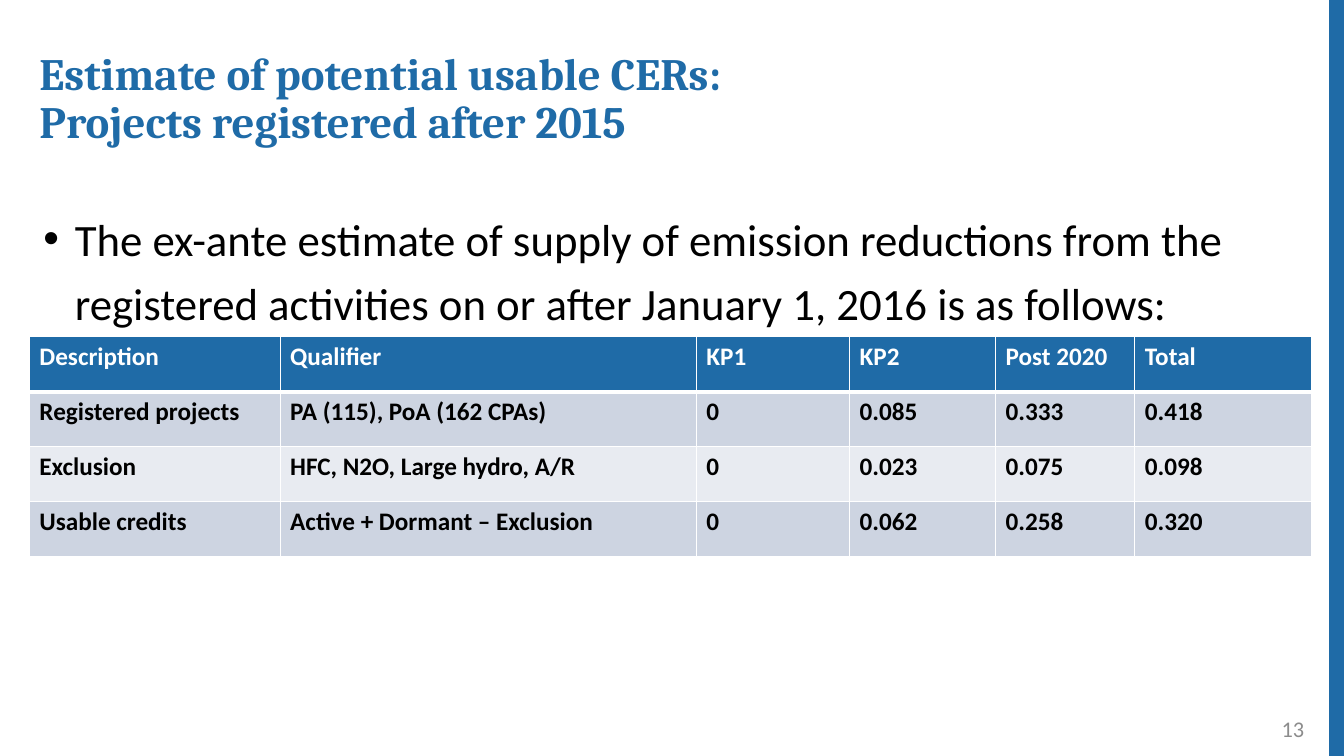
from dataclasses import dataclass

from lxml import etree
from pptx import Presentation
from pptx import util as u
from pptx.dml.color import RGBColor
from pptx.enum import shapes, text
from pptx.oxml import ns


@dataclass(frozen=True)
class Theme:
    accent: str = "1F6BA7"
    ink: str = "000000"
    white: str = "FFFFFF"
    muted: str = "8C8C8C"
    bands: tuple[str, str] = ("CDD4E1", "E8EBF1")
    heading_font: str = "Cambria"
    body_font: str = "Calibri"
    large: int = 32
    table: int = 18
    small: int = 16


@dataclass(frozen=True)
class Box:
    left: float
    top: float
    width: float
    height: float

    def lengths(self) -> tuple:
        return tuple(u.Cm(v) for v in (self.left, self.top, self.width, self.height))


@dataclass(frozen=True)
class Column:
    heading: str
    width: float
    values: tuple[str, str, str]


THEME = Theme()
SLIDE_WIDTH, SLIDE_HEIGHT = 33.87, 19.05
TITLE_BOX = Box(0.74, 1.17, 18.47, 1.47)
BODY_BOX = Box(0.84, 4.93, 32.26, 13.08)
NUMBER_BOX = Box(25.5, 17.86, 7.62, 1.02)
EDGE_X = 33.71
TABLE_LEFT, TABLE_TOP, ROW_HEIGHT = 0.74, 8.48, 1.39

TITLE = "Estimate of potential usable CERs: Projects registered after 2015"
BODY = (
    "The ex-ante estimate of supply of emission reductions from the "
    "registered activities on or after January 1, 2016 is as follows:"
)
COLUMNS = (
    Column("Description", 6.32, ("Registered projects", "Exclusion", "Usable credits")),
    Column("Qualifier", 10.49, ("PA (115), PoA (162 CPAs)", "HFC, N2O, Large hydro, A/R",
                                "Active + Dormant – Exclusion")),
    Column("KP1", 3.86, ("0", "0", "0")),
    Column("KP2", 3.68, ("0.085", "0.023", "0.062")),
    Column("Post 2020", 3.51, ("0.333", "0.075", "0.258")),
    Column("Total", 4.45, ("0.418", "0.098", "0.320")),
)


def write(tf, content: str, size: int, color: str,
          font: str = THEME.body_font, bold: bool = False):
    """Set one paragraph of text, format its run and return the paragraph."""
    tf.text = content
    p = tf.paragraphs[0]
    r = p.runs[0]
    r.font.name = font
    r.font.size = u.Pt(size)
    r.font.bold = bold
    r.font.color.rgb = RGBColor.from_string(color)
    return p


def place(sp, box: Box, anchor=text.MSO_ANCHOR.TOP):
    """Move a shape, fix its text behaviour and return its text frame."""
    sp.left, sp.top, sp.width, sp.height = box.lengths()
    tf = sp.text_frame
    tf.word_wrap = True
    tf.auto_size = text.MSO_AUTO_SIZE.NONE
    tf.vertical_anchor = anchor
    return tf


def add_bullet(p) -> None:
    props = p._p.get_or_add_pPr()
    props.set("marL", str(u.Cm(0.79)))
    props.set("indent", str(-u.Cm(0.79)))
    font = etree.SubElement(props, ns.qn("a:buFont"))
    font.set("typeface", "Arial")
    etree.SubElement(props, ns.qn("a:buChar")).set("char", "•")


def set_borders(cell, bottom: float) -> None:
    props = cell._tc.get_or_add_tcPr()
    widths = {"lnL": 1, "lnR": 1, "lnT": 1, "lnB": bottom}
    for index, (side, width) in enumerate(widths.items()):
        line = etree.Element(ns.qn(f"a:{side}"), w=str(u.Pt(width)))
        fill = etree.SubElement(line, ns.qn("a:solidFill"))
        etree.SubElement(fill, ns.qn("a:srgbClr")).set("val", THEME.white)
        props.insert(index, line)


def add_estimates(slide) -> None:
    rows = 1 + len(COLUMNS[0].values)
    box = Box(TABLE_LEFT, TABLE_TOP, sum(c.width for c in COLUMNS), rows * ROW_HEIGHT)
    table = slide.shapes.add_table(rows, len(COLUMNS), *box.lengths()).table
    for x, column in enumerate(COLUMNS):
        table.columns[x].width = u.Cm(column.width)
        for y, value in enumerate((column.heading, *column.values)):
            header = y == 0
            cell = table.cell(y, x)
            write(cell.text_frame, value, THEME.table,
                  THEME.white if header else THEME.ink, bold=True)
            cell.fill.solid()
            cell.fill.fore_color.rgb = RGBColor.from_string(
                THEME.accent if header else THEME.bands[(y - 1) % 2])
            set_borders(cell, bottom=3 if header else 1)


def add_edge(slide) -> None:
    edge = slide.shapes.add_connector(
        shapes.MSO_CONNECTOR.STRAIGHT, u.Cm(EDGE_X), 0, u.Cm(EDGE_X), u.Cm(SLIDE_HEIGHT))
    edge.line.color.rgb = RGBColor.from_string(THEME.accent)
    edge.line.width = u.Pt(12)
    etree.SubElement(edge._element.spPr, ns.qn("a:effectLst"))


def main() -> None:
    prs = Presentation()
    prs.slide_width, prs.slide_height = u.Cm(SLIDE_WIDTH), u.Cm(SLIDE_HEIGHT)
    slide = prs.slides.add_slide(prs.slide_layouts[1])
    add_edge(slide)

    p = write(place(slide.shapes.title, TITLE_BOX), TITLE, THEME.large, THEME.accent,
              THEME.heading_font, bold=True)
    p.alignment = text.PP_ALIGN.LEFT
    p.line_spacing = 0.9

    p = write(place(slide.placeholders[1], BODY_BOX), BODY, THEME.large, THEME.ink)
    add_bullet(p)
    p.line_spacing = 1.2
    p.space_before = u.Pt(0)

    number = slide.shapes.add_textbox(*NUMBER_BOX.lengths())
    p = write(place(number, NUMBER_BOX, text.MSO_ANCHOR.MIDDLE), "13",
              THEME.small, THEME.muted)
    p.alignment = text.PP_ALIGN.RIGHT

    add_estimates(slide)
    prs.save("out.pptx")


if __name__ == "__main__":
    main()
